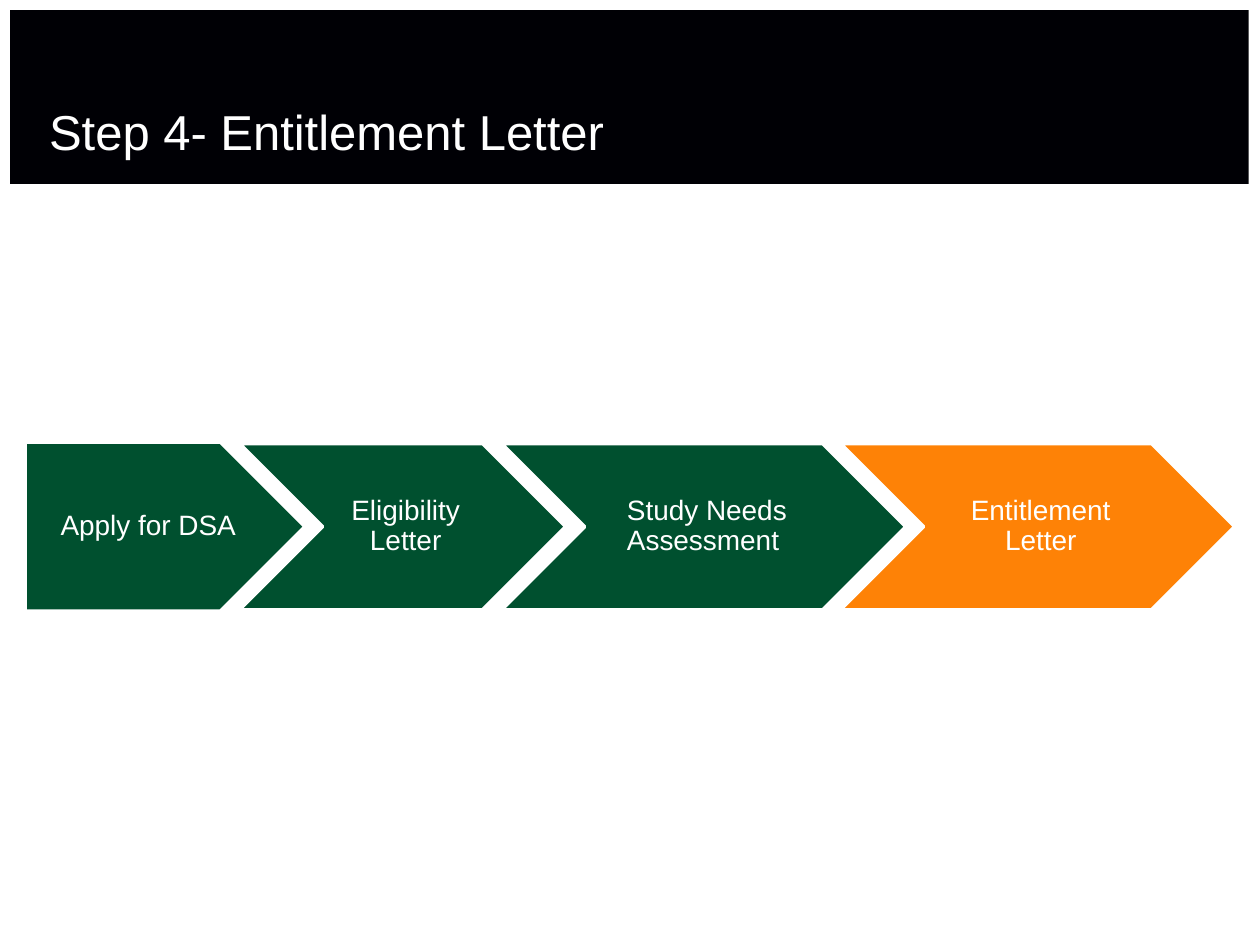
from pptx import Presentation
from pptx.dml.color import RGBColor
from pptx.enum import shapes, text
from pptx.util import Inches, Pt

COLORS = {"band": "000005", "done": "00502F", "current": "FE8206", "white": "FFFFFF"}
PLATE, CHEVRON = shapes.MSO_SHAPE.PENTAGON, shapes.MSO_SHAPE.CHEVRON
STEPS = [
    ("Apply for DSA", PLATE, "done", (0.2, 3.51, 2.22, 1.34)),
    ("Eligibility Letter", CHEVRON, "done", (1.9, 3.52, 2.59, 1.32)),
    ("Study Needs Assessment ", CHEVRON, "done", (3.98, 3.52, 3.21, 1.32)),
    ("Entitlement Letter", CHEVRON, "current", (6.67, 3.52, 3.13, 1.32)),
]


def rgb(name):
    """Return the named colour."""
    return RGBColor.from_string(COLORS[name])


def add_shape(s, kind, box, color):
    """Add a filled preset shape without outline or shadow."""
    sp = s.shapes.add_shape(kind, *map(Inches, box))
    sp.shadow.inherit = False
    sp.fill.solid()
    sp.fill.fore_color.rgb = rgb(color)
    sp.line.fill.background()
    return sp


def add_text(s, box, words, size, anchor, margins):
    """Add a wrapped white text box and return its paragraph."""
    tf = s.shapes.add_textbox(*map(Inches, box)).text_frame
    tf.word_wrap = True
    tf.vertical_anchor = anchor
    tf.margin_left, tf.margin_top, tf.margin_right, tf.margin_bottom = map(Inches, margins)
    p = tf.paragraphs[0]
    r = p.add_run()
    r.text = words
    r.font.name = "Arial"
    r.font.size = Pt(size)
    r.font.color.rgb = rgb("white")
    return p


def add_header(s, box):
    """Draw the dark title band with the slide title."""
    x, y, w, h = box
    add_shape(s, shapes.MSO_SHAPE.RECTANGLE, box, "band")
    add_text(s, (x + 0.31, y + 0.38, 5.33, 0.81), "Step 4- Entitlement Letter", 28,
             text.MSO_ANCHOR.BOTTOM, (0, 0, 0, 0))


def add_step(s, box, words, kind, color):
    """Draw one process arrow and its centred label."""
    x, y, w, h = box
    sp = add_shape(s, kind, box, color)
    sp.line.color.rgb = rgb("white")
    sp.line.width = Pt(2)
    if kind == PLATE:
        label, left = (x, y, w - h / 4, h), 0.09
    else:
        label, left = (x + h / 2, y, w - h, h), 0.07
    p = add_text(s, label, words, 16, text.MSO_ANCHOR.MIDDLE, (left, 0.05, 0.02, 0.05))
    p.alignment = text.PP_ALIGN.CENTER
    p.line_spacing = 0.9


def main():
    """Build and save the slide."""
    prs = Presentation()
    prs.slide_width, prs.slide_height = Inches(10), Inches(7.5)
    s = prs.slides.add_slide(prs.slide_layouts[6])
    add_header(s, (0.08, 0.08, 9.83, 1.38))
    for words, kind, color, box in STEPS:
        add_step(s, box, words, kind, color)
    prs.save("out.pptx")


if __name__ == "__main__":
    main()
